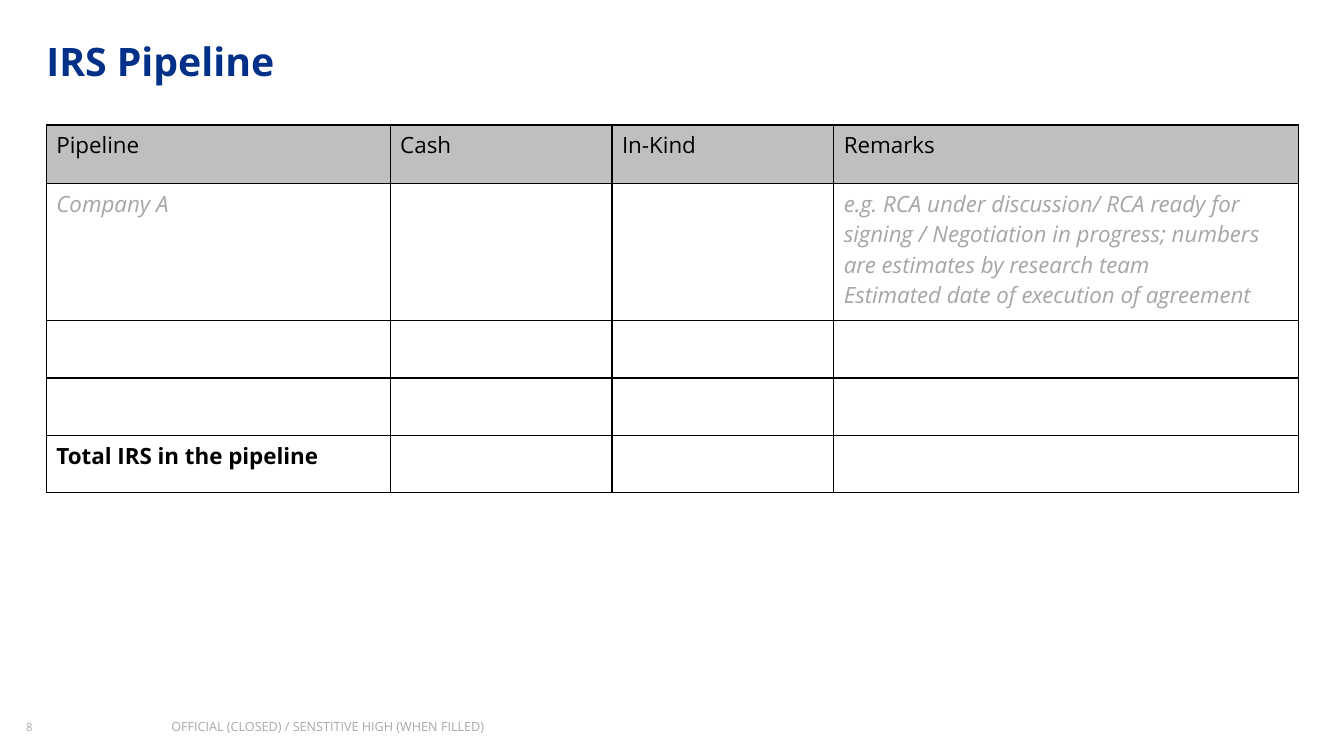
from pptx import Presentation
from pptx.util import Inches, Pt
from pptx.dml.color import RGBColor as RGB
from pptx.enum.text import MSO_ANCHOR as Anchor, PP_ALIGN as Align
from pptx.oxml import parse_xml
from pptx.oxml.ns import nsdecls

COLORS = {"navy": "003087", "black": "000000", "white": "FFFFFF",
          "head": "BFBFBF", "hint": "A6A6A6", "foot": "ABA8A8"}


def style(para, color, **look):
    para.alignment = Align.LEFT
    para.font.name = "Open Sans"
    para.font.color.rgb = RGB.from_string(COLORS[color])
    for key, value in look.items():
        setattr(para.font, key, value)


def fill_box(box, text, place, color, space, **look):
    box.left, box.top, box.width, box.height = map(Inches, place)
    frame = box.text_frame
    frame.text = text
    frame.word_wrap = True
    frame.vertical_anchor = Anchor.TOP
    for side in ("left", "right", "top", "bottom"):
        setattr(frame, f"margin_{side}", 0)
    para = frame.paragraphs[0]
    para.line_spacing = space
    style(para, color, **look)


prs = Presentation()
prs.slide_width, prs.slide_height = Inches(13.33), Inches(7.5)
slide = prs.slides.add_slide(prs.slide_layouts[5])
shapes = slide.shapes

# Title
fill_box(shapes.title, "IRS Pipeline", (0.46, 0.32, 11.02, 0.52),
         "navy", 1.1, size=Pt(28), bold=True)

# Pipeline table
widths = [3.41, 2.2, 2.2, 4.61]
heights = [0.58, 1.36, 0.57, 0.57, 0.57]
remark = ("e.g. RCA under discussion/ RCA ready for signing / Negotiation "
          "in progress; numbers are estimates by research team\n"
          "Estimated date of execution of agreement")
rows = [
    (["Pipeline", "Cash", "In-Kind", "Remarks"], "head", "black", {}),
    (["Company A", "", "", remark], "white", "hint", {"italic": True}),
    ([""] * 4, "white", "black", {}),
    ([""] * 4, "white", "black", {}),
    (["Total IRS in the pipeline", "", "", ""], "white", "black", {"bold": True}),
]
table = shapes.add_table(len(rows), len(widths), Inches(0.46), Inches(1.24),
                         Inches(sum(widths)), Inches(sum(heights))).table
table.first_row = table.horz_banding = False
for col, width in zip(table.columns, widths):
    col.width = Inches(width)
for row, height, (texts, fill, color, look) in zip(table.rows, heights, rows):
    row.height = Inches(height)
    for cell, text in zip(row.cells, texts):
        cell.text = text
        for para in cell.text_frame.paragraphs:
            style(para, color, size=Pt(16), **look)
        # Borders come before the fill in the cell properties
        props = cell._tc.get_or_add_tcPr()
        for edge in ("lnL", "lnR", "lnT", "lnB"):
            props.append(parse_xml(
                f'<a:{edge} {nsdecls("a")} w="{Pt(1)}"><a:solidFill>'
                f'<a:srgbClr val="{COLORS["black"]}"/></a:solidFill></a:{edge}>'))
        cell.fill.solid()
        cell.fill.fore_color.rgb = RGB.from_string(COLORS[fill])

# Footer
notes = [
    ("8", (0.26, 7.13, 0.79, 0.19), 8, 1.1),
    ("OFFICIAL (CLOSED) / SENSTITIVE HIGH (WHEN FILLED)",
     (1.7, 7.13, 5.33, 0.19), 9, 1.0),
]
for text, place, size, space in notes:
    box = shapes.add_textbox(*map(Inches, place))
    fill_box(box, text, place, "foot", space, size=Pt(size))

prs.save("out.pptx")
